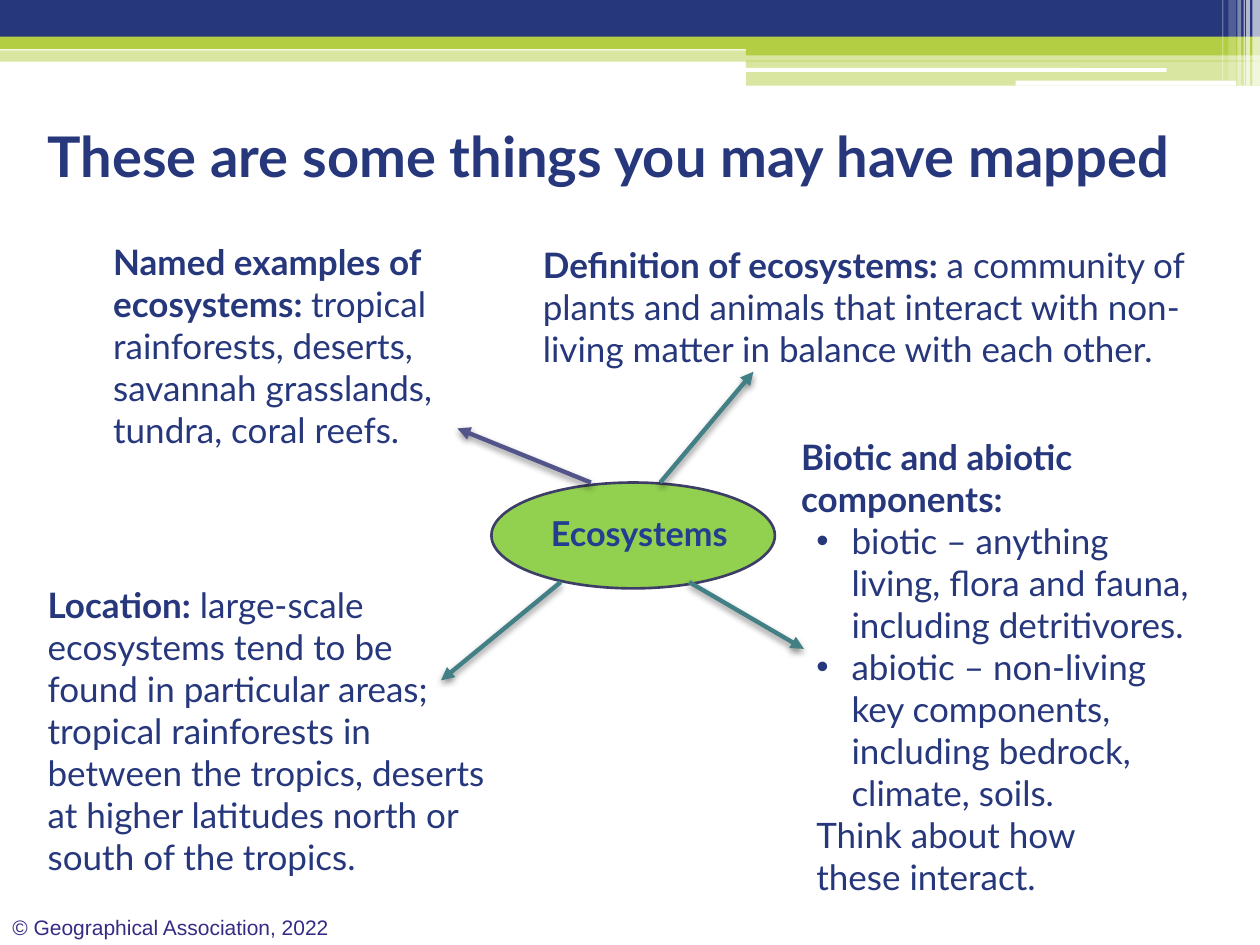
import pptx
import pptx.dml.color
import pptx.enum.shapes
import pptx.enum.text
import pptx.oxml
import pptx.oxml.ns
import pptx.util
from pptx.util import Inches

NAVY, LIME, WHITE, TEAL = "26377C", "B4CE44", "FFFFFF", "438086"
SHAPES = pptx.enum.shapes.MSO_SHAPE
ANCHOR = pptx.enum.text.MSO_ANCHOR
ALIGN = pptx.enum.text.PP_ALIGN
NAMESPACE = pptx.oxml.ns.nsdecls("a")


def colour(value):
    return pptx.dml.color.RGBColor.from_string(value)


class SlideBuilder:
    font = "Lato"
    size = 20
    ink = NAVY

    def __init__(self, page):
        self.page = page

    def shape(self, kind, place, fill, opacity=100, line=None):
        shape = self.page.shapes.add_shape(kind, *map(Inches, place))
        shape.shadow.inherit = False
        shape.fill.solid()
        shape.fill.fore_color.rgb = colour(fill)
        if opacity < 100:
            tint = shape.fill._xPr.find(".//" + pptx.oxml.ns.qn("a:srgbClr"))
            tint.append(pptx.oxml.parse_xml(f'<a:alpha {NAMESPACE} val="{opacity * 1000}"/>'))
        if line:
            shape.line.color.rgb = colour(line)
            shape.line.width = pptx.util.Pt(1.5)
        else:
            shape.line.fill.background()
        return shape

    def text(self, place, paragraphs, anchor=ANCHOR.MIDDLE, **style):
        box = self.page.shapes.add_textbox(*map(Inches, place))
        frame = box.text_frame
        frame.word_wrap = True
        frame.vertical_anchor = anchor
        for index, (heading, body) in enumerate(paragraphs):
            para = frame.paragraphs[0] if index == 0 else frame.add_paragraph()
            para.text = heading or body
            if heading and body:
                para.add_run().text = body
            for number, span in enumerate(para.runs):
                self.format(span, bold=bool(heading) and number == 0, **style)
        return frame

    def format(self, span, bold, size=None, font=None, ink=None):
        span.font.name = font or self.font
        span.font.size = pptx.util.Pt(size or self.size)
        span.font.color.rgb = colour(ink or self.ink)
        span.font.bold = bold

    def indent(self, para, left, hanging=0, bullet=None):
        properties = para._p.get_or_add_pPr()
        properties.set("marL", str(Inches(left)))
        properties.set("indent", str(Inches(-hanging)))
        if bullet:
            properties.append(pptx.oxml.parse_xml(f'<a:buFont {NAMESPACE} typeface="Arial"/>'))
            properties.append(pptx.oxml.parse_xml(f'<a:buChar {NAMESPACE} char="{bullet}"/>'))

    def arrow(self, start, end, ink):
        arrow = self.page.shapes.add_connector(
            pptx.enum.shapes.MSO_CONNECTOR.STRAIGHT, *map(Inches, start + end))
        arrow.line.color.rgb = colour(ink)
        arrow.line.width = pptx.util.Pt(2.5)
        arrow.line._get_or_add_ln().append(
            pptx.oxml.parse_xml(f'<a:tailEnd {NAMESPACE} type="triangle"/>'))
        blur, distance = pptx.util.Pt(4), pptx.util.Pt(2)
        arrow._element.spPr.append(pptx.oxml.parse_xml(
            f'<a:effectLst {NAMESPACE}><a:outerShdw blurRad="{blur}" dist="{distance}" '
            'dir="5400000" rotWithShape="0"><a:srgbClr val="000000">'
            '<a:alpha val="45000"/></a:srgbClr></a:outerShdw></a:effectLst>'))


def draw_banner(builder):
    for place, fill, opacity in [
        ((0, 0.4, 10, 0.09), LIME, 50),
        ((0, 0, 10, 0.34), NAVY, 100),
        ((0, 0.29, 10, 0.1), LIME, 100),
        ((5.92, 0.34, 4.08, 0.1), LIME, 100),
        ((5.92, 0.48, 4.08, 0.2), LIME, 50),
    ]:
        builder.shape(SHAPES.RECTANGLE, place, fill, opacity)
    for place in [(5.91, 0.54, 3.35, 0.03), (8.06, 0.64, 1.75, 0.04)]:
        builder.shape(SHAPES.ROUNDED_RECTANGLE, place, WHITE)
    for left, width, height, opacity in [
        (9.94, 0.06, 0.68, 65), (9.89, 0.03, 0.68, 65), (9.87, 0.01, 0.68, 60),
        (9.82, 0.03, 0.68, 40), (9.75, 0.06, 0.64, 20), (9.7, 0.01, 0.64, 30),
    ]:
        builder.shape(SHAPES.RECTANGLE, (left, 0, width, height), WHITE, opacity)


def draw_mind_map(builder):
    builder.shape(SHAPES.OVAL, (3.9, 3.83, 2.25, 0.84), "92D050", line="3D3E66")
    centre = builder.text((4.21, 4.06, 1.73, 0.49), [("Ecosystems", "")],
                          ANCHOR.TOP, size=19.6, ink="243D91")
    centre.paragraphs[0].alignment = ALIGN.CENTER
    centre.paragraphs[0].line_spacing = 0.88

    builder.text((0.28, 4.62, 3.7, 2.36), [(
        "Location:",
        " large-scale ecosystems tend to be found in particular areas; tropical rainforests in "
        "between the tropics, deserts at higher latitudes north or south of the tropics.")])
    builder.text((4.21, 1.8, 5.75, 1.26), [(
        "Definition of ecosystems: ",
        "a community of plants and animals that interact with non-living matter in balance "
        "with each other.")])
    components = builder.text((6.26, 3.44, 3.39, 3.7), [
        ("Biotic and abiotic components:", ""),
        ("", "biotic – anything living, flora and fauna, including detritivores."),
        ("", "abiotic – non-living key components, including bedrock, climate, soils."),
        ("", "Think about how \vthese interact."),
    ])
    for para in components.paragraphs[1:3]:
        builder.indent(para, 0.4, 0.28, "•")
    builder.indent(components.paragraphs[3], 0.12)
    builder.text((0.8, 1.8, 3.53, 1.89), [(
        "Named examples of ecosystems: ",
        "tropical rainforests, deserts, savannah grasslands, tundra, coral reefs.")])

    for start, end, ink in [
        ((4.69, 3.83), (3.63, 3.4), "53548A"),
        ((5.24, 3.83), (5.98, 2.95), TEAL),
        ((4.45, 4.62), (3.5, 5.4), TEAL),
        ((5.47, 4.62), (6.38, 5.15), TEAL),
    ]:
        builder.arrow(start, end, ink)


def main():
    deck = pptx.Presentation()
    deck.slide_width, deck.slide_height = Inches(10), Inches(7.5)
    builder = SlideBuilder(deck.slides.add_slide(deck.slide_layouts[6]))
    draw_banner(builder)
    builder.text((0, 7.21, 2.87, 0.3), [("", "© Geographical Association, 2022")],
                 ANCHOR.TOP, size=12, font="Arial", ink="352B84")
    builder.text((0.28, 0.48, 9.45, 1.5),
                 [("These are some things you may have mapped", "")], size=32)
    draw_mind_map(builder)
    deck.save("out.pptx")


if __name__ == "__main__":
    main()
